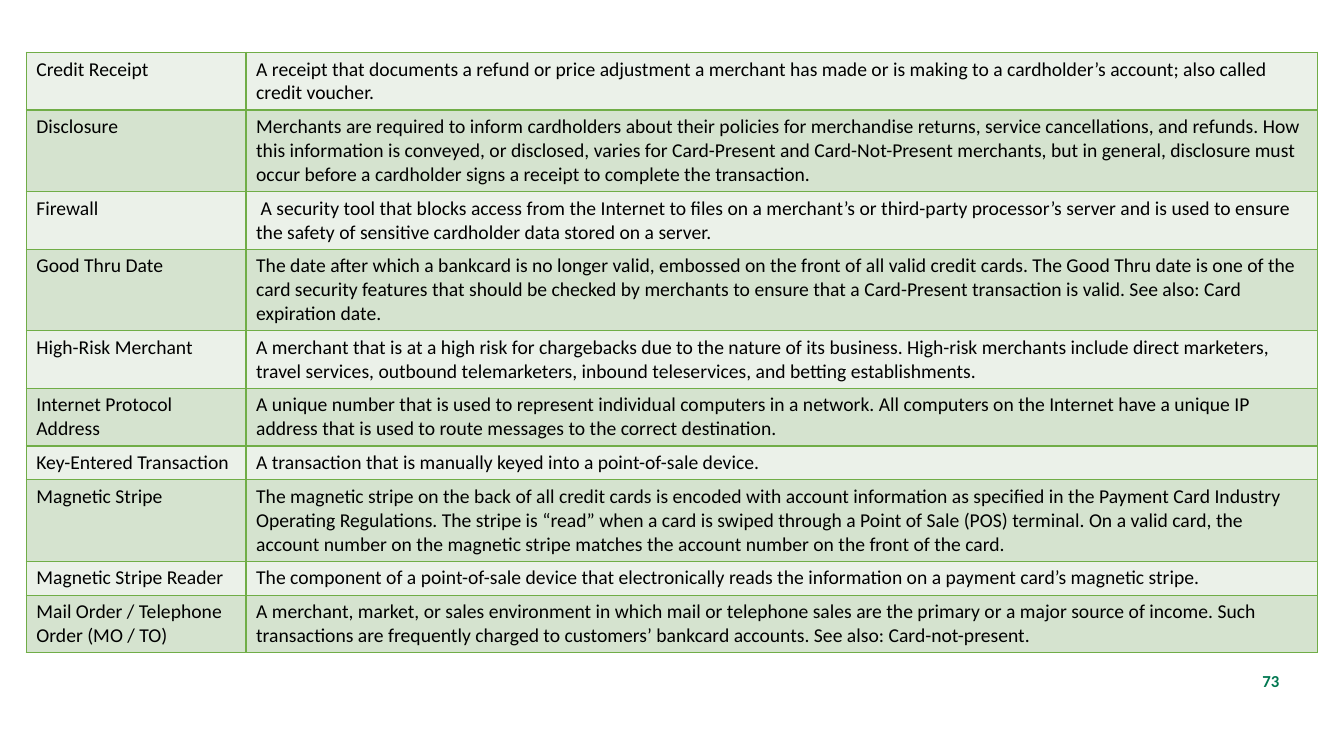
from typing import NamedTuple

from lxml import etree
from pptx import Presentation
from pptx.dml.color import RGBColor
from pptx.enum.text import MSO_ANCHOR, PP_ALIGN
from pptx.oxml.ns import qn
from pptx.util import Pt

MIDDLE = MSO_ANCHOR.MIDDLE
RIGHT = PP_ALIGN.RIGHT

FONT = "Calibri"
COLORS = {
    "text": "000000",
    "number": "007851",
    "border": "70AD47",
    "odd": "EBF1E9",
    "even": "D5E3CF",
}
TABLE_LEFT, TABLE_TOP = 18.8, 37.4
COLUMN_WIDTHS = (157, 765.2)
LINE_HEIGHT, CELL_PADDING = 17, 7.2


class Entry(NamedTuple):
    term: str
    definition: str
    lines: int


ENTRIES = [
    Entry("Credit Receipt",
          "A receipt that documents a refund or price adjustment a merchant has made or is "
          "making to a cardholder’s account; also called credit voucher.", 2),
    Entry("Disclosure",
          "Merchants are required to inform cardholders about their policies for merchandise "
          "returns, service cancellations, and refunds. How this information is conveyed, or "
          "disclosed, varies for Card-Present and Card-Not-Present merchants, but in general, "
          "disclosure must occur before a cardholder signs a receipt to complete the "
          "transaction.", 3),
    Entry("Firewall",
          " A security tool that blocks access from the Internet to files on a merchant’s or "
          "third-party processor’s server and is used to ensure the safety of sensitive "
          "cardholder data stored on a server.", 2),
    Entry("Good Thru Date",
          "The date after which a bankcard is no longer valid, embossed on the front of all "
          "valid credit cards. The Good Thru date is one of the card security features that "
          "should be checked by merchants to ensure that a Card-Present transaction is valid. "
          "See also: Card expiration date.", 3),
    Entry("High-Risk Merchant",
          "A merchant that is at a high risk for chargebacks due to the nature of its business. "
          "High-risk merchants include direct marketers, travel services, outbound "
          "telemarketers, inbound teleservices, and betting establishments.", 2),
    Entry("Internet Protocol Address",
          "A unique number that is used to represent individual computers in a network. All "
          "computers on the Internet have a unique IP address that is used to route messages "
          "to the correct destination.", 2),
    Entry("Key-Entered Transaction",
          "A transaction that is manually keyed into a point-of-sale device.", 1),
    Entry("Magnetic Stripe",
          "The magnetic stripe on the back of all credit cards is encoded with account "
          "information as specified in the Payment Card Industry Operating Regulations. The "
          "stripe is “read” when a card is swiped through a Point of Sale (POS) terminal. On a "
          "valid card, the account number on the magnetic stripe matches the account number on "
          "the front of the card.", 3),
    Entry("Magnetic Stripe Reader",
          "The component of a point-of-sale device that electronically reads the information "
          "on a payment card’s magnetic stripe.", 1),
    Entry("Mail Order / Telephone Order (MO / TO)",
          "A merchant, market, or sales environment in which mail or telephone sales are the "
          "primary or a major source of income. Such transactions are frequently charged to "
          "customers’ bankcard accounts. See also: Card-not-present.", 2),
]


def add_run(p, text: str, size: float, color: str, bold: bool = False) -> None:
    r = p.add_run()
    r.text = text
    r.font.name = FONT
    r.font.size = Pt(size)
    r.font.bold = bold
    r.font.color.rgb = RGBColor.from_string(COLORS[color])


def add_borders(cell) -> None:
    """Draw a 1 pt line on all four sides; the lines must precede the fill in tcPr."""
    tc_pr = cell._tc.get_or_add_tcPr()
    for i, side in enumerate(("lnL", "lnR", "lnT", "lnB")):
        ln = etree.Element(qn(f"a:{side}"), w=str(Pt(1)))
        fill = etree.SubElement(ln, qn("a:solidFill"))
        etree.SubElement(fill, qn("a:srgbClr"), val=COLORS["border"])
        tc_pr.insert(i, ln)


def fill_cell(cell, text: str, fill: str) -> None:
    cell.fill.solid()
    cell.fill.fore_color.rgb = RGBColor.from_string(COLORS[fill])
    add_borders(cell)
    add_run(cell.text_frame.paragraphs[0], text, 14, "text")


def add_glossary(s, entries: list[Entry]) -> None:
    heights = [CELL_PADDING + LINE_HEIGHT * e.lines for e in entries]
    table = s.shapes.add_table(len(entries), len(COLUMN_WIDTHS), Pt(TABLE_LEFT), Pt(TABLE_TOP),
                               Pt(sum(COLUMN_WIDTHS)), Pt(sum(heights))).table
    table.first_row = False
    table.horz_banding = False
    for column, width in zip(table.columns, COLUMN_WIDTHS):
        column.width = Pt(width)
    for i, (entry, height) in enumerate(zip(entries, heights)):
        table.rows[i].height = Pt(height)
        fill = "even" if i % 2 else "odd"
        fill_cell(table.cell(i, 0), entry.term, fill)
        fill_cell(table.cell(i, 1), entry.definition, fill)


def add_page_number(s, number: str) -> None:
    tf = s.shapes.add_textbox(Pt(854), Pt(476), Pt(67), Pt(21)).text_frame
    tf.word_wrap = True
    tf.vertical_anchor = MIDDLE
    p = tf.paragraphs[0]
    p.alignment = RIGHT
    add_run(p, number, 12, "number", bold=True)


def main() -> None:
    prs = Presentation()
    prs.slide_width, prs.slide_height = Pt(960), Pt(540)
    s = prs.slides.add_slide(prs.slide_layouts.get_by_name("Blank"))
    add_page_number(s, "73")
    add_glossary(s, ENTRIES)
    prs.save("out.pptx")


if __name__ == "__main__":
    main()
